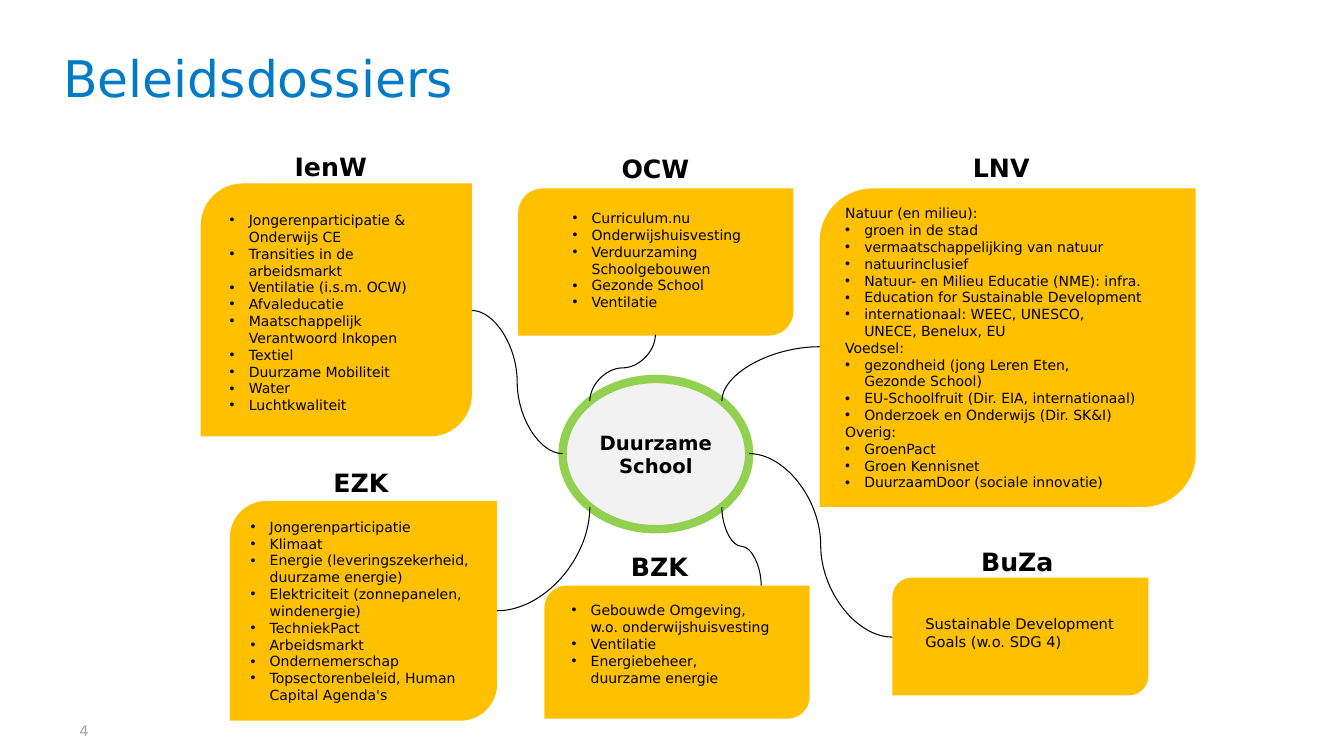
"""Build the Beleidsdossiers slide: six ministry cards around a central theme."""
from lxml import etree
from pptx import Presentation
from pptx.dml.color import RGBColor
from pptx.enum.shapes import MSO_CONNECTOR, MSO_SHAPE
from pptx.enum.text import MSO_ANCHOR, PP_ALIGN
from pptx.oxml.ns import qn
from pptx.util import Inches, Pt

CARD_SHAPE = MSO_SHAPE.ROUND_2_DIAG_RECTANGLE
OVAL = MSO_SHAPE.OVAL
CURVE = MSO_CONNECTOR.CURVE
LEFT, CENTER = PP_ALIGN.LEFT, PP_ALIGN.CENTER
TOP, MIDDLE, BOTTOM = MSO_ANCHOR.TOP, MSO_ANCHOR.MIDDLE, MSO_ANCHOR.BOTTOM

FONT = "DejaVu Sans"
COLORS = {
    "title": "017BC6",
    "card": "FFC000",
    "hub": "F2F2F2",
    "ring": "92D050",
    "text": "000000",
    "line": "000000",
    "number": "A6A6A6",
}
BULLET_INDENT = 0.19
LABEL_SIZE = (1.32, 0.4)

CARDS = [
    {
        "label": "IenW", "box": (1.99, 1.82, 2.69, 2.51),
        "label_offset": (0.63, -0.37), "note": (0.19, 0.23, 2.25, 2.32),
        "topics": [
            "Jongerenparticipatie & Onderwijs CE",
            "Transities in de arbeidsmarkt",
            "Ventilatie (i.s.m. OCW)",
            "Afvaleducatie",
            "Maatschappelijk Verantwoord Inkopen",
            "Textiel",
            "Duurzame Mobiliteit",
            "Water",
            "Luchtkwaliteit",
        ],
    },
    {
        "label": "OCW", "box": (5.14, 1.87, 2.73, 1.46),
        "label_offset": (0.7, -0.4), "note": (0.44, 0.16, 2.05, 1.11),
        "topics": [
            "Curriculum.nu",
            "Onderwijshuisvesting",
            "Verduurzaming Schoolgebouwen",
            "Gezonde School",
            "Ventilatie",
        ],
    },
    {
        "label": "LNV", "box": (8.13, 1.87, 3.73, 3.16),
        "label_offset": (1.14, -0.41),
        "topics": [
            "Natuur (en milieu):",
            "groen in de stad",
            "vermaatschappelijking van natuur",
            "natuurinclusief",
            "Natuur- en Milieu Educatie (NME): infra.",
            "Education for Sustainable Development",
            "internationaal: WEEC, UNESCO,\nUNECE, Benelux, EU",
            "Voedsel:",
            "gezondheid (jong Leren Eten,\nGezonde School)",
            "EU-Schoolfruit (Dir. EIA, internationaal)",
            "Onderzoek en Onderwijs (Dir. SK&I)",
            "Overig:",
            "GroenPact",
            "Groen Kennisnet",
            "DuurzaamDoor (sociale innovatie)",
        ],
    },
    {
        "label": "EZK", "box": (2.28, 4.97, 2.65, 2.18),
        "label_offset": (0.64, -0.38),
        "topics": [
            "Jongerenparticipatie",
            "Klimaat",
            "Energie (leveringszekerheid,\nduurzame energie)",
            "Elektriciteit (zonnepanelen,\nwindenergie)",
            "TechniekPact",
            "Arbeidsmarkt",
            "Ondernemerschap",
            "Topsectorenbeleid, Human\nCapital Agenda's",
        ],
    },
    {
        "label": "BZK", "box": (5.4, 5.81, 2.63, 1.32),
        "label_offset": (0.48, -0.39), "note": (0.17, 0.11, 2.18, 1.11),
        "topics": [
            "Gebouwde Omgeving, w.o. onderwijshuisvesting",
            "Ventilatie",
            "Energiebeheer, duurzame energie",
        ],
    },
    {
        "label": "BuZa", "box": (8.85, 5.73, 2.54, 1.17),
        "label_offset": (0.58, -0.36), "note": (0.23, 0.32, 2.28, 0.45),
        "text": "Sustainable Development Goals (w.o. SDG 4)",
    },
]

CURVES = [
    ("side", (4.68, 3.08), (5.58, 4.5)),
    ("corner", (4.93, 6.06), (5.85, 5.03)),
    ("upright", (7.55, 5.81), (7.16, 5.03)),
    ("side", (7.43, 4.5), (8.85, 6.32)),
    ("upright", (6.5, 3.32), (5.85, 3.98)),
    ("corner", (8.13, 3.44), (7.16, 3.98)),
]


def color(name):
    """Return the named colour."""
    return RGBColor.from_string(COLORS[name])


def format_text(frame, size, name="text", bold=False, align=LEFT, anchor=TOP):
    """Format every run of a text frame."""
    frame.vertical_anchor = anchor
    for paragraph in frame.paragraphs:
        paragraph.alignment = align
        for run in paragraph.runs:
            run.font.name, run.font.size, run.font.bold = FONT, Pt(size), bold
            run.font.color.rgb = color(name)


def add_text(slide, box, text, size, **style):
    """Add a wrapping text box and return its frame."""
    frame = slide.shapes.add_textbox(*map(Inches, box)).text_frame
    frame.word_wrap = True
    frame.text = text
    format_text(frame, size, **style)
    return frame


def add_filled_shape(slide, kind, box, fill):
    """Add a flat shape without outline."""
    shape = slide.shapes.add_shape(kind, *map(Inches, box))
    shape.shadow.inherit = False
    shape.fill.solid()
    shape.fill.fore_color.rgb = color(fill)
    shape.line.fill.background()
    return shape


def write_topics(frame, topics):
    """Write bulleted topics, with plain headings and indented second lines."""
    lines = [(topic, index, line) for topic in topics
             for index, line in enumerate(topic.split("\n"))]
    frame.text = "\n".join(line for _, _, line in lines)
    for paragraph, (topic, index, _) in zip(frame.paragraphs, lines):
        if topic.endswith(":"):
            continue
        properties = paragraph._p.get_or_add_pPr()
        properties.set("marL", str(Inches(BULLET_INDENT)))
        properties.set("indent", str(0 if index else -Inches(BULLET_INDENT)))
        if index == 0:
            etree.SubElement(properties, qn("a:buFont")).set("typeface", "Arial")
            etree.SubElement(properties, qn("a:buChar")).set("char", "•")


def add_card(slide, card):
    """Place a ministry card with its label and contents."""
    left, top = card["box"][:2]
    shape = add_filled_shape(slide, CARD_SHAPE, card["box"], "card")
    dx, dy = card["label_offset"]
    add_text(slide, (left + dx, top + dy, *LABEL_SIZE), card["label"], 18, bold=True, align=CENTER)
    frame = shape.text_frame
    frame.word_wrap = False
    if "note" in card:
        dx, dy, width, height = card["note"]
        frame = add_text(slide, (left + dx, top + dy, width, height), card.get("text", ""), 10.5)
    if "topics" in card:
        write_topics(frame, card["topics"])
        format_text(frame, 10, anchor=TOP if "note" in card else MIDDLE)


def add_hub(slide, box):
    """Place the central theme in its ringed oval."""
    hub = add_filled_shape(slide, OVAL, box, "hub")
    hub.line.color.rgb = color("ring")
    hub.line.width = Pt(6)
    hub.text_frame.word_wrap = False
    hub.text_frame.text = "Duurzame\nSchool"
    format_text(hub.text_frame, 14, bold=True, align=CENTER, anchor=MIDDLE)


def add_curve(slide, kind, start, end):
    """Draw a curved line that leaves sideways, upright or round one corner."""
    if kind == "upright":
        middle_x, middle_y = (start[0] + end[0]) / 2, (start[1] + end[1]) / 2
        start, end = [(middle_x + y - middle_y, middle_y - x + middle_x) for x, y in (start, end)]
    curve = slide.shapes.add_connector(CURVE, *map(Inches, (*start, *end)))
    curve.line.color.rgb = color("line")
    curve.line.width = Pt(0.75)
    properties = curve._element.spPr
    etree.SubElement(properties, qn("a:effectLst"))
    if kind == "upright":
        properties.find(qn("a:xfrm")).set("rot", str(90 * 60000))
    if kind == "corner":
        properties.find(qn("a:prstGeom")).set("prst", "curvedConnector2")


def main():
    """Build and save the slide."""
    presentation = Presentation()
    presentation.slide_width, presentation.slide_height = Inches(13.33), Inches(7.5)
    slide = presentation.slides.add_slide(presentation.slide_layouts[6])
    title = add_text(slide, (0.53, 0.37, 8.66, 0.76), "Beleidsdossiers", 36, name="title", anchor=BOTTOM)
    title.paragraphs[0].line_spacing = 0.9
    number = add_text(slide, (0.69, 7.16, 5.47, 0.29), "4", 10.5, name="number")
    number.margin_top = 0
    for card in CARDS:
        add_card(slide, card)
    add_hub(slide, (5.58, 3.76, 1.85, 1.49))
    for kind, start, end in CURVES:
        add_curve(slide, kind, start, end)
    presentation.save("out.pptx")


if __name__ == "__main__":
    main()
